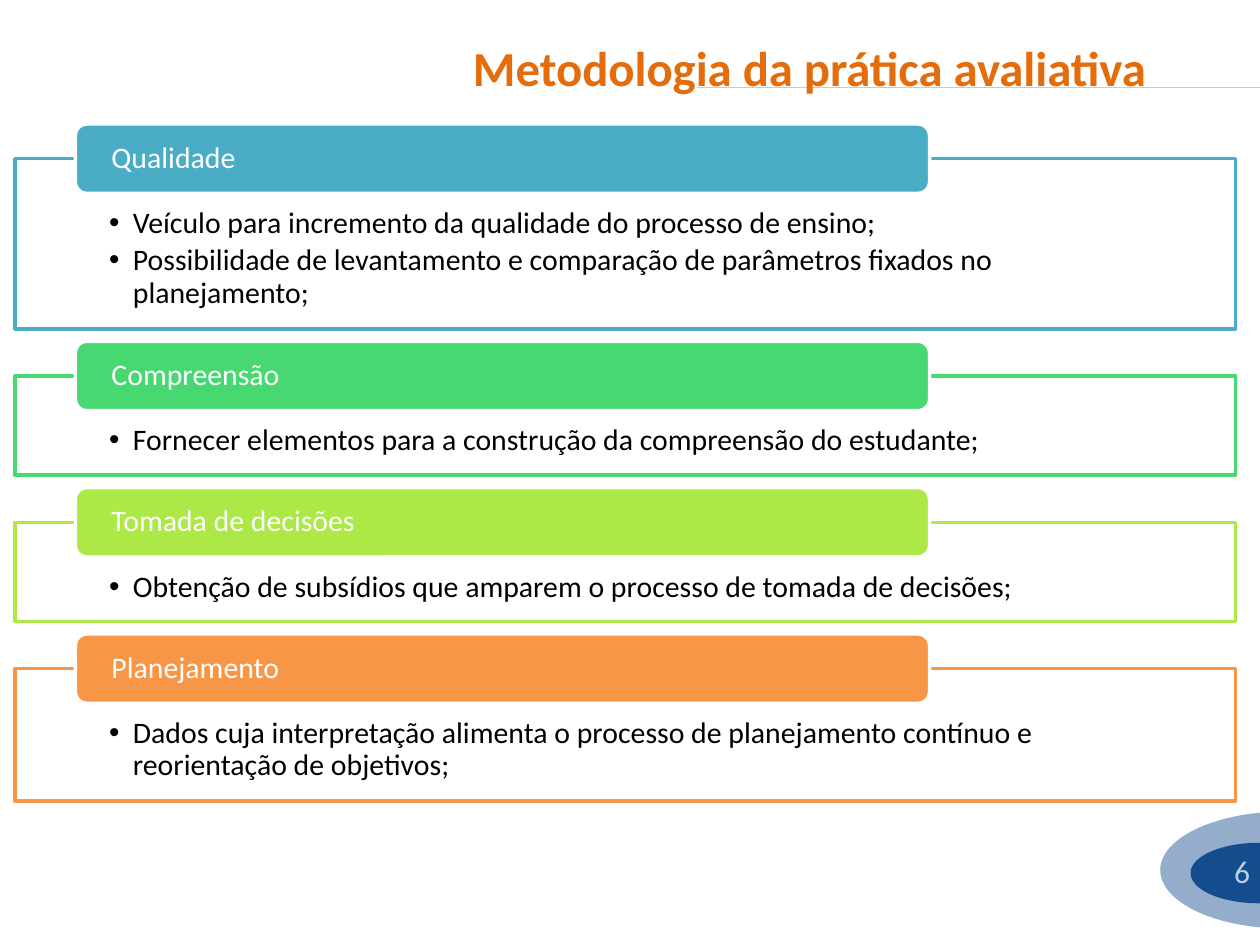
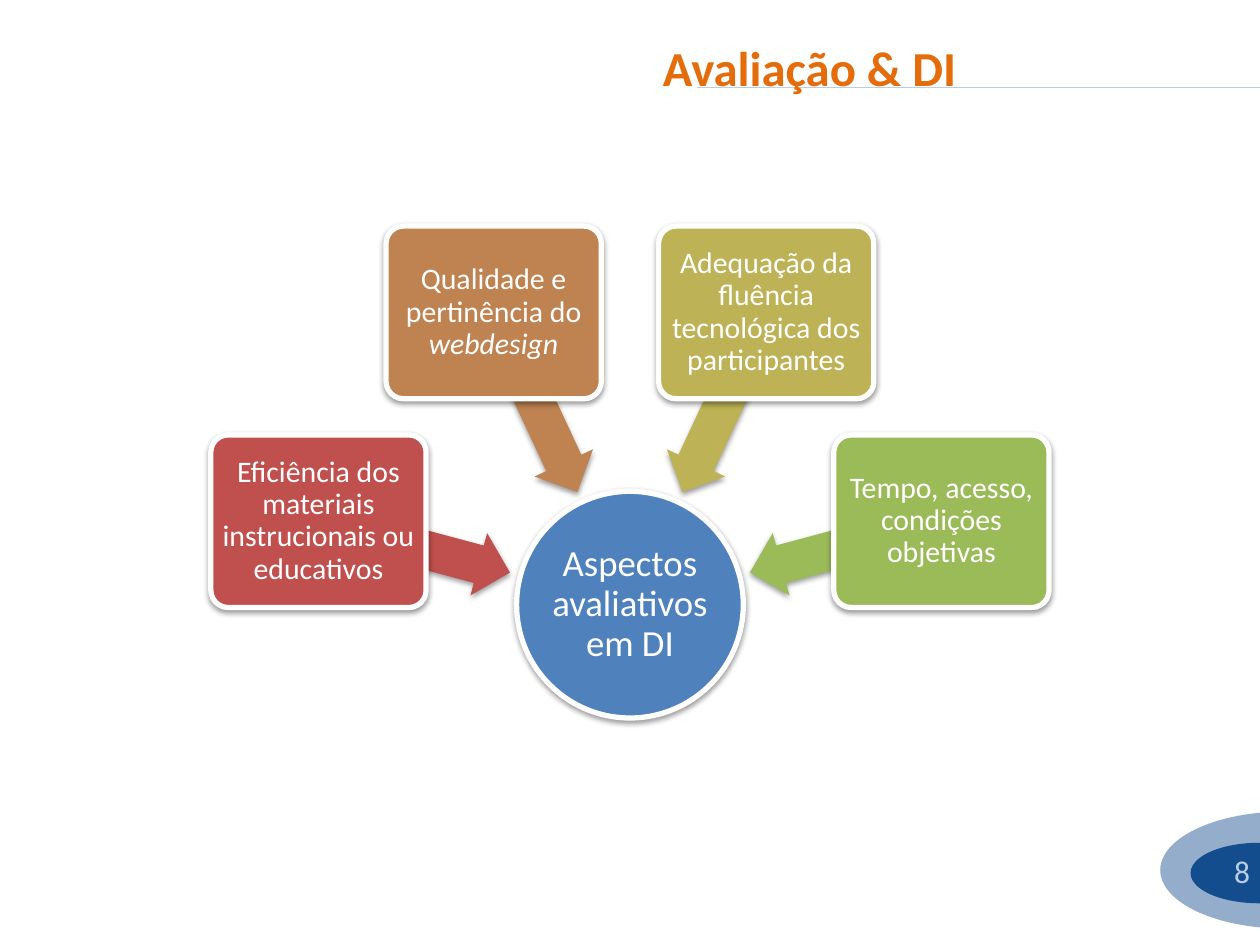
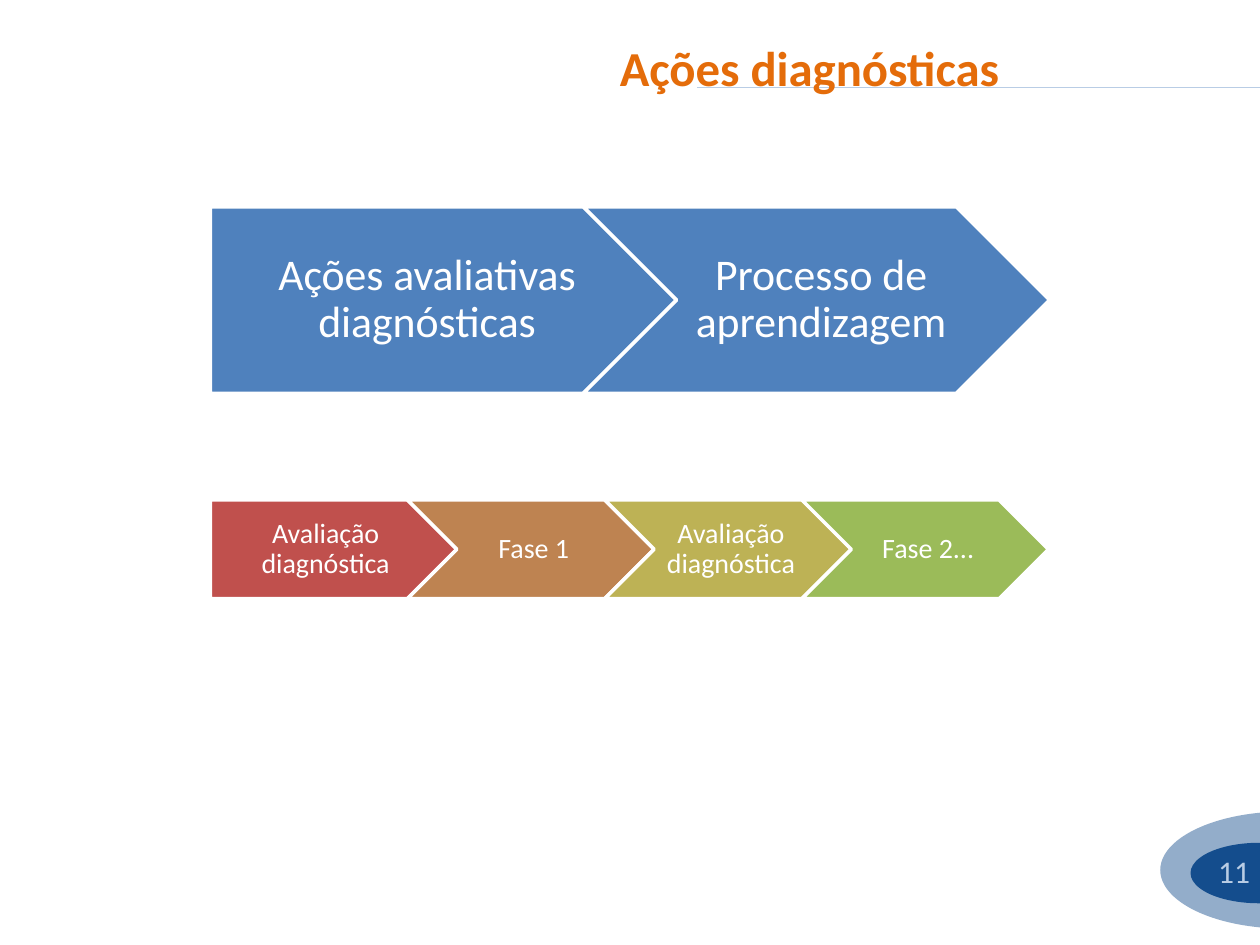
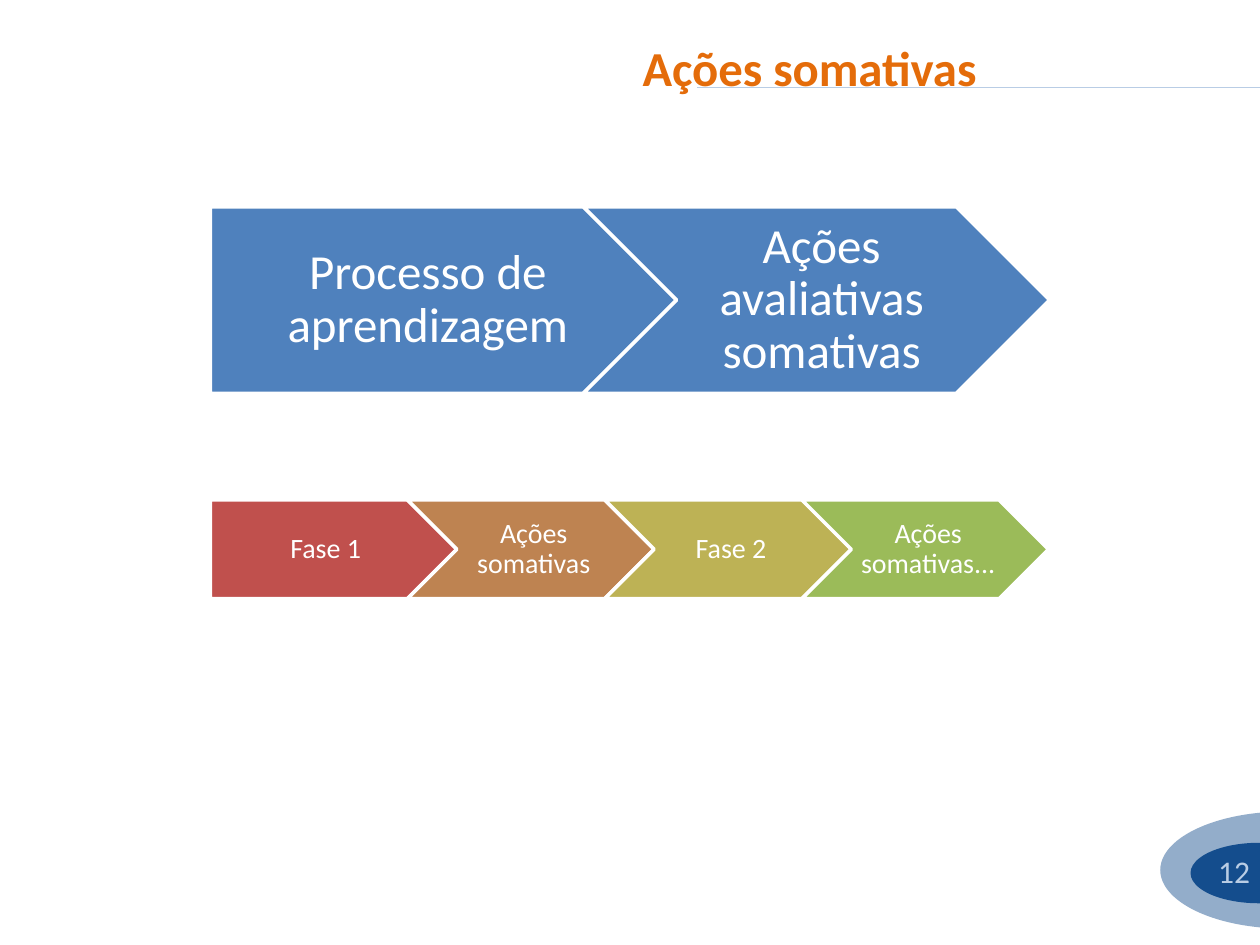
from dataclasses import dataclass
from math import cos, radians, sin

from lxml.etree import SubElement
from pptx import Presentation
from pptx.dml.color import RGBColor
from pptx.enum.shapes import MSO_CONNECTOR, MSO_SHAPE as SHAPE
from pptx.enum.text import MSO_ANCHOR as ANCHOR, PP_ALIGN as ALIGN
from pptx.oxml.ns import qn
from pptx.util import Cm, Pt


@dataclass(frozen=True)
class Theme:
    font: str = "Calibri"
    white: str = "FFFFFF"
    black: str = "000000"
    title: str = "E46C0A"
    navy: str = "144D8D"
    pale: str = "B9CDE5"
    blue: str = "4F81BD"
    accents: tuple = ("C0504D", "BE8351", "BDB255", "9BBB59")
    sections: tuple = ("4BACC6", "47D872", "ACE946", "F79646")
    title_size: float = 27.9
    number_size: float = 18
    body_size: float = 17
    hub_size: float = 21
    phase_size: float = 16


T = Theme()

QUALITIES = [
    ("Qualidade", 3.43, [
        "Veículo para incremento da qualidade do processo de ensino;",
        "Possibilidade de levantamento e comparação de parâmetros fixados no planejamento;",
    ]),
    ("Compreensão", 2.0, [
        "Fornecer elementos para a construção da compreensão do estudante;",
    ]),
    ("Tomada de decisões", 2.0, [
        "Obtenção de subsídios que amparem o processo de tomada de decisões;",
    ]),
    ("Planejamento", 2.67, [
        "Dados cuja interpretação alimenta o processo de planejamento contínuo e reorientação de objetivos;",
    ]),
]
HUB = "Aspectos avaliativos em DI"
ASPECTS = [
    (195, "Eficiência dos materiais instrucionais ou educativos", ""),
    (245, "Qualidade e pertinência do ", "webdesign"),
    (295, "Adequação da fluência tecnológica dos participantes", ""),
    (345, "Tempo, acesso, condições objetivas", ""),
]
DIAGNOSTIC = {
    "size": 25,
    "actions": ["Ações avaliativas diagnósticas", "Processo de aprendizagem"],
    "phases": ["Avaliação diagnóstica", "Fase 1", "Avaliação diagnóstica", "Fase 2..."],
}
SUMMATIVE = {
    "size": 28,
    "actions": ["Processo de aprendizagem", "Ações avaliativas somativas"],
    "phases": ["Fase 1", "Ações somativas", "Fase 2", "Ações somativas..."],
}


def rgb(code):
    return RGBColor.from_string(code)


def add_shape(s, kind, box, fill, line=None, width=2, alpha=None, adjust=()):
    sp = s.shapes.add_shape(kind, *map(Cm, box))
    sp.shadow.inherit = False
    sp.fill.solid()
    sp.fill.fore_color.rgb = rgb(fill)
    if alpha:
        clr = sp.fill._xPr.find(qn("a:solidFill"))[0]
        SubElement(clr, qn("a:alpha"), val=str(alpha * 1000))
    if line:
        sp.line.color.rgb = rgb(line)
        sp.line.width = Pt(width)
    else:
        sp.line.fill.background()
    for i, value in enumerate(adjust):
        sp.adjustments[i] = value
    return sp


def add_shadow(sp):
    effects = sp._element.spPr.find(qn("a:effectLst"))
    shadow = SubElement(effects, qn("a:outerShdw"), blurRad="40000", dist="20000",
                        dir="5400000", rotWithShape="0")
    clr = SubElement(shadow, qn("a:srgbClr"), val=T.black)
    SubElement(clr, qn("a:alpha"), val="38000")


def set_frame(sp, insets, anchor=ANCHOR.MIDDLE):
    tf = sp.text_frame
    tf.word_wrap = True
    tf.vertical_anchor = anchor
    tf.margin_left, tf.margin_top, tf.margin_right, tf.margin_bottom = map(Cm, insets)
    return tf


def style(p, size, color, align=ALIGN.CENTER, spacing=0.9, bold=False):
    p.alignment = align
    p.line_spacing = spacing
    for r in p.runs:
        r.font.name = T.font
        r.font.size = Pt(size)
        r.font.bold = bold
        r.font.color.rgb = rgb(color)


def write(sp, text, size, color, insets, tail="", **look):
    p = set_frame(sp, insets).paragraphs[0]
    p.text = text
    if tail:
        r = p.add_run()
        r.text = tail
        r.font.italic = True
    style(p, size, color, **look)


def write_bullets(sp, lines):
    tf = set_frame(sp, (1.9, 0.99, 1.9, 0.33), ANCHOR.TOP)
    tf.text = "\n".join(lines)
    for p in tf.paragraphs:
        pPr = p._p.get_or_add_pPr()
        pPr.set("marL", str(Cm(0.48)))
        pPr.set("indent", str(-Cm(0.48)))
        SubElement(pPr, qn("a:buFont"), typeface="Arial")
        SubElement(pPr, qn("a:buChar"), char="•")
        style(p, T.body_size, T.black, ALIGN.LEFT)
        p.space_after = Pt(3)


def add_base(prs, title, number):
    s = prs.slides.add_slide(prs.slide_layouts[6])
    rule = s.shapes.add_connector(MSO_CONNECTOR.STRAIGHT, Cm(25.4), Cm(1.75), Cm(14.05), Cm(1.75))
    rule.line.color.rgb = rgb(T.pale)
    rule.line.width = Pt(0.25)
    SubElement(rule._element.spPr, qn("a:effectLst"))
    add_shape(s, SHAPE.OVAL, (23.39, 16.36, 5.03, 2.36), T.navy, alpha=46)
    add_shape(s, SHAPE.OVAL, (24, 16.99, 2.77, 1.22), T.navy)
    insets = (0.25, 0.13, 0.25, 0.13)
    heading = s.shapes.add_textbox(*map(Cm, (8.51, 0.76, 15.62, 1.17)))
    write(heading, title, T.title_size, T.title, insets, spacing=1, bold=True)
    page = s.shapes.add_textbox(*map(Cm, (19.53, 17.04, 5.92, 1.02)))
    write(page, str(number), T.number_size, T.pale, insets, align=ALIGN.RIGHT, spacing=1)
    return s


def add_qualities(s):
    top, gap = 3.2, 0.95
    for (name, height, lines), color in zip(QUALITIES, T.sections):
        body = add_shape(s, SHAPE.RECTANGLE, (0.3, top, 24.61, height), T.white, color, alpha=90)
        write_bullets(body, lines)
        tab = add_shape(s, SHAPE.ROUNDED_RECTANGLE, (1.52, top - 0.7, 17.22, 1.4), color, T.white)
        write(tab, name, T.body_size, T.white, (0.66, 0, 0.66, 0), align=ALIGN.LEFT)
        top += height + gap


def add_aspects(s):
    hub_x, hub_y = 12.7, 12.19

    def box(angle, radius, width, height):
        x = hub_x + radius * cos(radians(angle))
        y = hub_y + radius * sin(radians(angle))
        return x - width / 2, y - height / 2, width, height

    hub = add_shape(s, SHAPE.OVAL, box(0, 0, 4.57, 4.57), T.blue, T.white, 3)
    add_shadow(hub)
    write(hub, HUB, T.hub_size, T.white, (0.03,) * 4)
    for (angle, text, tail), color in zip(ASPECTS, T.accents):
        arrow = add_shape(s, SHAPE.LEFT_ARROW, box(angle, 4.5, 3.99, 1.3), color, adjust=(0.6, 0.5))
        arrow.rotation = angle
        add_shadow(arrow)
        card = add_shape(s, SHAPE.ROUNDED_RECTANGLE, box(angle, 6.5, 4.34, 3.48),
                         color, T.white, 3, adjust=(0.1,))
        add_shadow(card)
        write(card, text, T.body_size, T.white, (0.1,) * 4, tail)


def add_chain(s, labels, colors, top, width, size):
    unit = size * 0.0037
    for i, (label, color) in enumerate(zip(labels, colors)):
        kind = SHAPE.CHEVRON if i else SHAPE.PENTAGON
        box = (4.24 + i * width * 0.8, top, width, width * 0.4)
        step = add_shape(s, kind, box, color, T.white, adjust=(0.5,))
        left = 3 if i else 4
        write(step, label, size, T.white, (left * unit, 2 * unit, unit, 2 * unit))


def add_actions(s, content):
    add_chain(s, content["actions"], (T.blue, T.blue), 4.17, 9.4, content["size"])
    add_chain(s, content["phases"], T.accents, 10.08, 4.97, T.phase_size)


def main():
    prs = Presentation()
    prs.slide_width, prs.slide_height = Cm(25.4), Cm(19.05)
    add_qualities(add_base(prs, "Metodologia da prática avaliativa", 6))
    add_aspects(add_base(prs, "Avaliação & DI", 8))
    add_actions(add_base(prs, "Ações diagnósticas", 11), DIAGNOSTIC)
    add_actions(add_base(prs, "Ações somativas", 12), SUMMATIVE)
    prs.save("out.pptx")


if __name__ == "__main__":
    main()
